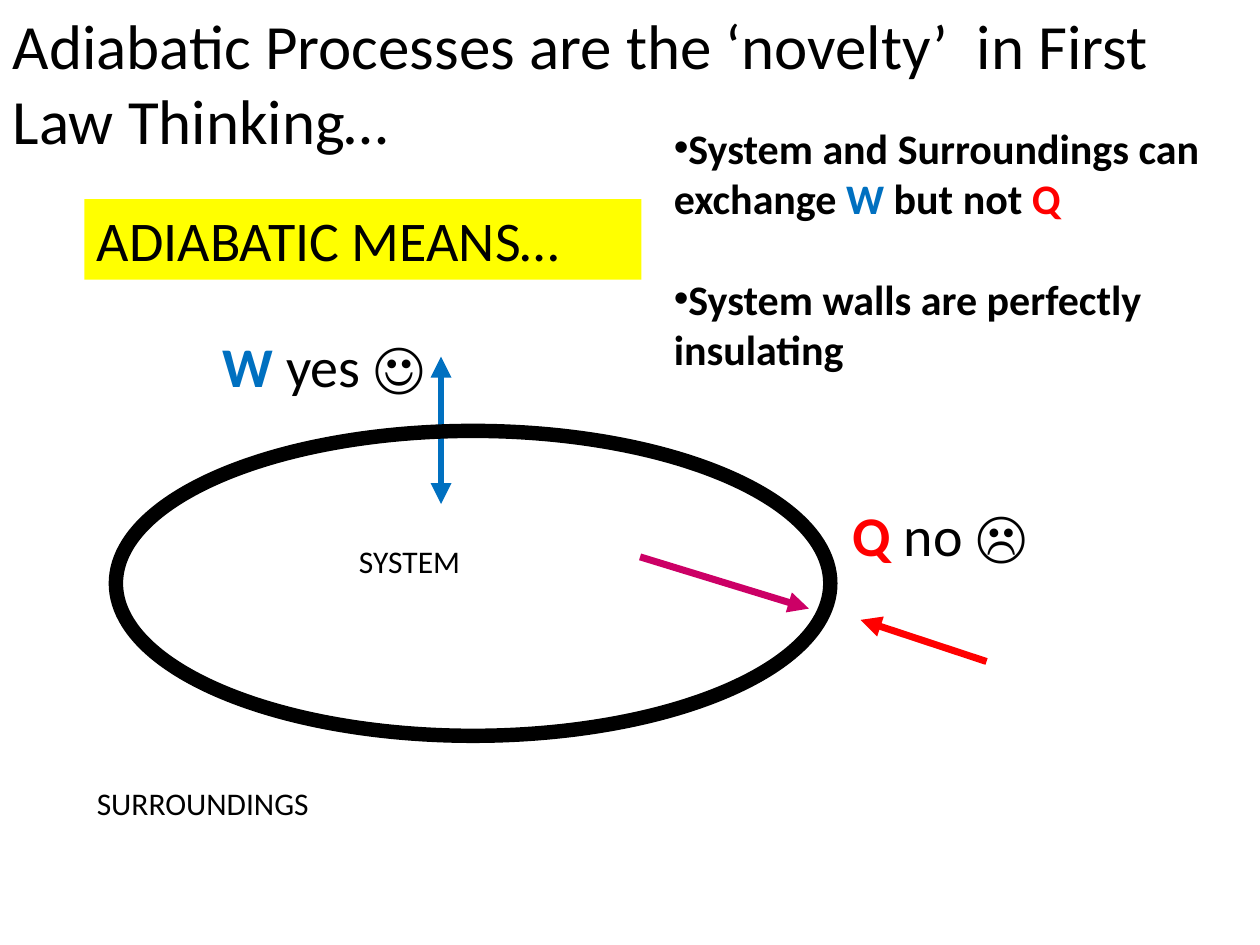
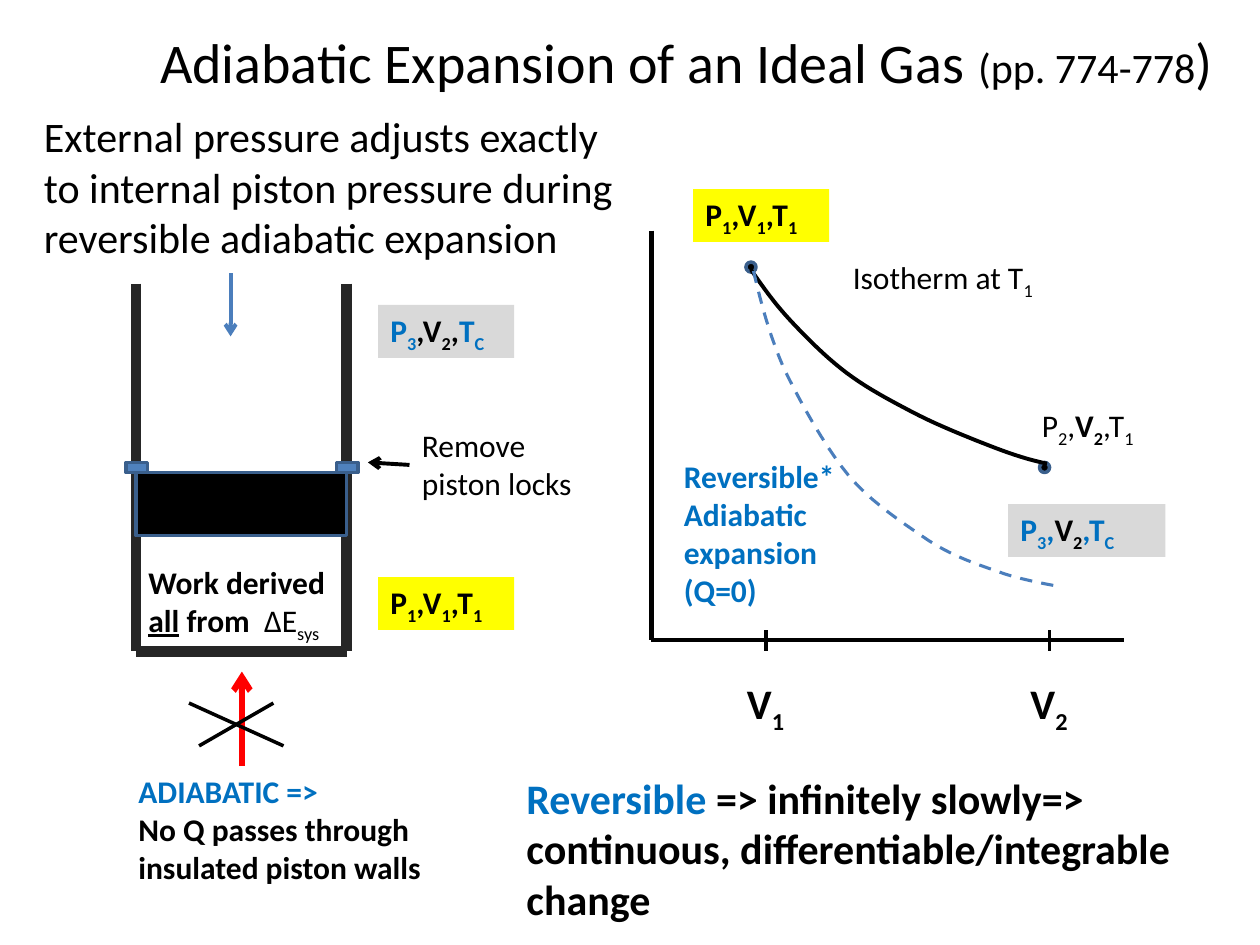
import pptx
import pptx.util
import pptx.dml.color
import pptx.enum.dml
import pptx.enum.shapes
import pptx.enum.text
import pptx.oxml.ns
import pptx.oxml.xmlchemy
from pptx.util import Inches

FONT = "Calibri"
BLACK, BLUE, RED = "000000", "0070C0", "FF0000"
YELLOW, GREY, PINK = "FFFF00", "D9D9D9", "CC0066"
WALL, EDGE, LOCK, CURVE = "262626", "3A5F8C", "4F81BD", "4B7EBC"
KIND = pptx.enum.shapes.MSO_SHAPE
OVAL, RECT = KIND.OVAL, KIND.RECTANGLE

START = [[("P{1},V{1},T{1}", "b", BLACK)]]
FINAL = [[("P{3}", "b", BLUE), (",V{2},", "b", BLACK), ("T{C}", "b", BLUE)]]
FINAL_PLOT = [[("P{3},", "b", BLUE), ("V{2}", "b", BLACK), (",T{C}", "b", BLUE)]]

MEANING = {
    "title": ((0, 0, 9.33, 1.31), 36,
              [("Adiabatic Processes are the ‘novelty’  in First Law Thinking…", "", BLACK)]),
    "shapes": [(OVAL, (0.92, 3.42, 5.67, 2.42), None, BLACK, 8.25)],
    "lines": [
        ((3.5, 2.83), (3.5, 4), BLUE, 4, "triangle", "triangle"),
        ((7.83, 5.25), (6.83, 4.92), RED, 4, None, "triangle"),
        ((5.08, 4.42), (6.42, 4.83), PINK, 4, None, "triangle"),
    ],
    "curves": [],
    "texts": [
        ((2.75, 4.25, 1.58, 0.4), 18, None, [[("SYSTEM", "", BLACK)]]),
        ((0.67, 6.17, 3, 0.4), 18, None, [[("SURROUNDINGS", "", BLACK)]]),
        ((1.67, 2.58, 2, 0.64), 32, None, [[("W", "b", BLUE), (" yes ☺", "", BLACK)]]),
        ((0.67, 1.58, 4.42, 0.64), 32, YELLOW, [[("ADIABATIC MEANS…", "", BLACK)]]),
        ((6.67, 3.92, 1.67, 0.64), 32, None, [[("Q", "b", RED), (" no ☹", "", BLACK)]]),
    ],
    "bullets": ((5.25, 0.92, 4.83, 2.93), 24, None, [
        [("System and Surroundings can exchange ", "b", BLACK), ("W", "b", BLUE),
         (" but not ", "b", BLACK), ("Q", "b", RED)],
        [("System walls are perfectly insulating", "b", BLACK)],
    ]),
}

LEFT, RIGHT, TOP, BASE = 1.08, 2.75, 2.25, 5.17
AXIS, FLOOR = 5.17, 5.08
ISOTHERM = [(5.96, 2.14), (6.05, 2.27), (6.14, 2.4), (6.27, 2.54),
            (6.4, 2.68), (6.56, 2.84), (6.72, 2.96),
            (6.88, 3.08), (7.05, 3.17), (7.24, 3.27),
            (7.43, 3.37), (7.68, 3.47), (7.86, 3.54),
            (8.04, 3.61), (8.17, 3.65), (8.31, 3.68)]
ADIABAT = [(5.98, 2.15), (6.04, 2.4), (6.1, 2.64), (6.22, 2.92),
           (6.35, 3.19), (6.55, 3.55), (6.74, 3.78),
           (6.93, 4), (7.18, 4.16), (7.37, 4.29),
           (7.57, 4.42), (7.76, 4.48), (7.93, 4.54),
           (8.09, 4.6), (8.38, 4.65), (8.38, 4.65)]

GAS = {
    "title": ((1.17, 0.17, 8.67, 0.64), 32,
              [("Adiabatic Expansion of an Ideal Gas ", "", BLACK),
               ("(pp. 774-778", "", BLACK, 24), (")", "", BLACK)]),
    "lines": [
        ((AXIS, 1.83), (AXIS, FLOOR), BLACK, 2.5, None, None),
        ((AXIS, FLOOR), (8.92, FLOOR), BLACK, 2.5, None, None),
        *[((x, 5), (x, 5.17), BLACK, 2, None, None) for x in (6.08, 8.33)],
        *[((x, TOP), (x, BASE), WALL, 6, None, None) for x in (LEFT, RIGHT)],
        ((RIGHT, BASE), (LEFT, BASE), WALL, 6, None, None),
        ((1.83, 2.17), (1.83, 2.67), CURVE, 2.25, None, "arrow"),
        ((1.92, 6.08), (1.92, 5.33), RED, 3.5, None, "arrow"),
        ((2.17, 5.58), (1.58, 5.92), BLACK, 2, None, None),
        ((2.25, 5.92), (1.5, 5.58), BLACK, 2, None, None),
        ((3.25, 3.69), (2.92, 3.67), BLACK, 2.25, None, "arrow"),
    ],
    "shapes": [
        *[(OVAL, (x, y, 0.08, 0.08), BLACK, EDGE, 2) for x, y in ((5.92, 2.08), (8.25, 3.67))],
        (RECT, (LEFT, 3.75, RIGHT - LEFT, 0.5), BLACK, EDGE, 2),
        *[(RECT, (x - 0.08, 3.67, 0.17, 0.08), LOCK, EDGE, 2) for x in (LEFT, RIGHT)],
    ],
    "curves": [(ISOTHERM, BLACK, 2.25, False), (ADIABAT, CURVE, 1.75, True)],
    "texts": [
        ((5.5, 1.5, 1.08, 0.42), 18, YELLOW, START),
        ((3, 4.58, 1.08, 0.42), 18, YELLOW, START),
        ((3, 2.42, 1.08, 0.42), 18, GREY, FINAL),
        ((8, 4, 1.25, 0.42), 18, GREY, FINAL_PLOT),
        ((8.17, 3.17, 1.25, 0.42), 18, None,
         [[("P{2},", "", BLACK), ("V{2}", "b", BLACK), (",T{1}", "", BLACK)]]),
        ((6.67, 2, 2, 0.4), 18, None, [[("Isotherm at T{1}", "", BLACK)]]),
        ((5.33, 3.58, 1.5, 1.31), 18, None,
         [[(line, "b", BLUE)] for line in ("Reversible*", "Adiabatic expansion", "(Q=0)")]),
        *[((x, 5.33, 0.75, 0.5), 24, None, [[(name, "b", BLACK)]])
          for x, name in ((5.83, "V{1}"), (8.08, "V{2}"))],
        ((4.08, 6.08, 5.92, 1.31), 24, None,
         [[("Reversible", "b", BLUE),
           (" => infinitely slowly=> continuous, differentiable/integrable change", "b", BLACK)]]),
        ((0.25, 0.83, 4.92, 1.31), 24, None,
         [[("External pressure adjusts exactly to internal piston pressure during "
            "reversible adiabatic expansion", "", BLACK)]]),
        ((1, 6.08, 2.58, 1.01), 18, None,
         [[("ADIABATIC =>", "b", BLUE)],
          [("No Q passes through insulated piston walls", "b", BLACK)]]),
        ((3.25, 3.33, 1.42, 0.71), 18, None, [[("Remove piston locks", "", BLACK)]]),
        ((LEFT, 4.42, 1.67, 0.71), 18, None,
         [[("Work derived ", "b", BLACK), ("all", "bu", BLACK), (" from  ", "b", BLACK),
           ("ΔE{sys}", "", BLACK)]]),
    ],
    "bullets": None,
}


def rgb(code):
    return pptx.dml.color.RGBColor.from_string(code)


def node(parent, tag, **attrs):
    item = pptx.oxml.xmlchemy.OxmlElement(tag)
    for key, value in attrs.items():
        item.set(key, value)
    parent.append(item)


def add_runs(para, runs, size):
    for text, style, color, *own in runs:
        for i, part in enumerate(text.replace("}", "{").split("{")):
            if not part:
                continue
            run = para.add_run()
            run.text = part
            font = run.font
            font.name = FONT
            font.size = pptx.util.Pt(own[0] if own else size)
            font.bold = "b" in style
            font.underline = "u" in style
            font.color.rgb = rgb(color)
            if i % 2:
                run._r.get_or_add_rPr().set("baseline", "-25000")


def set_frame(frame, paras, size):
    frame.word_wrap = True
    frame.auto_size = pptx.enum.text.MSO_AUTO_SIZE.NONE
    frame.vertical_anchor = pptx.enum.text.MSO_ANCHOR.TOP
    for i, runs in enumerate(paras):
        para = frame.paragraphs[0] if i == 0 else frame.add_paragraph()
        para.alignment = pptx.enum.text.PP_ALIGN.LEFT
        add_runs(para, runs, size)


def add_title(slide, box, size, runs):
    title = slide.shapes.title
    title.left, title.top, title.width, title.height = map(Inches, box)
    set_frame(title.text_frame, [runs], size)


def add_text(slide, box, size, fill, paras):
    shape = slide.shapes.add_textbox(*map(Inches, box))
    if fill:
        shape.fill.solid()
        shape.fill.fore_color.rgb = rgb(fill)
    set_frame(shape.text_frame, paras, size)
    return shape.text_frame


def add_list(slide, box, size, fill, paras):
    frame = add_text(slide, box, size, fill, paras)
    for i, para in enumerate(frame.paragraphs):
        if i:
            para.space_before = pptx.util.Pt(size * 1.2)
        node(para._p.get_or_add_pPr(), "a:buFont", typeface="Arial")
        node(para._p.get_or_add_pPr(), "a:buChar", char="•")


def set_line(line, color, width):
    line.color.rgb = rgb(color)
    line.width = pptx.util.Pt(width)


def add_form(slide, kind, box, fill, color, width):
    shape = slide.shapes.add_shape(kind, *map(Inches, box))
    shape.shadow.inherit = False
    if fill:
        shape.fill.solid()
        shape.fill.fore_color.rgb = rgb(fill)
    else:
        shape.fill.background()
    set_line(shape.line, color, width)


def add_line(slide, start, end, color, width, head, tail):
    kind = pptx.enum.shapes.MSO_CONNECTOR.STRAIGHT
    link = slide.shapes.add_connector(kind, *map(Inches, start + end))
    set_line(link.line, color, width)
    props = link._element.spPr
    for tag, tip in (("a:headEnd", head), ("a:tailEnd", tail)):
        if tip:
            node(props.find(pptx.oxml.ns.qn("a:ln")), tag, type=tip)
    node(props, "a:effectLst")


def trace(knots, steps=10):
    dots = [knots[0]]
    for i in range(0, len(knots) - 1, 3):
        for step in range(1, steps + 1):
            t = step / steps
            s = 1 - t
            parts = (s ** 3, 3 * s * s * t, 3 * s * t * t, t ** 3)
            dots.append(tuple(sum(w * knot[axis] for w, knot in zip(parts, knots[i:i + 4]))
                              for axis in (0, 1)))
    return [(Inches(x), Inches(y)) for x, y in dots]


def add_curve(slide, knots, color, width, dashed):
    dots = trace(knots)
    form = slide.shapes.build_freeform(*dots[0])
    form.add_line_segments(dots[1:], close=False)
    shape = form.convert_to_shape()
    shape.shadow.inherit = False
    shape.fill.background()
    set_line(shape.line, color, width)
    if dashed:
        shape.line.dash_style = pptx.enum.dml.MSO_LINE.DASH


def build(deck, page):
    slide = deck.slides.add_slide(deck.slide_layouts[5])
    add_title(slide, *page["title"])
    for key, draw in (("lines", add_line), ("shapes", add_form),
                      ("curves", add_curve), ("texts", add_text)):
        for item in page[key]:
            draw(slide, *item)
    if page["bullets"]:
        add_list(slide, *page["bullets"])


def main():
    deck = pptx.Presentation()
    deck.slide_width, deck.slide_height = Inches(10), Inches(7.5)
    for page in (MEANING, GAS):
        build(deck, page)
    deck.save("out.pptx")


if __name__ == "__main__":
    main()
